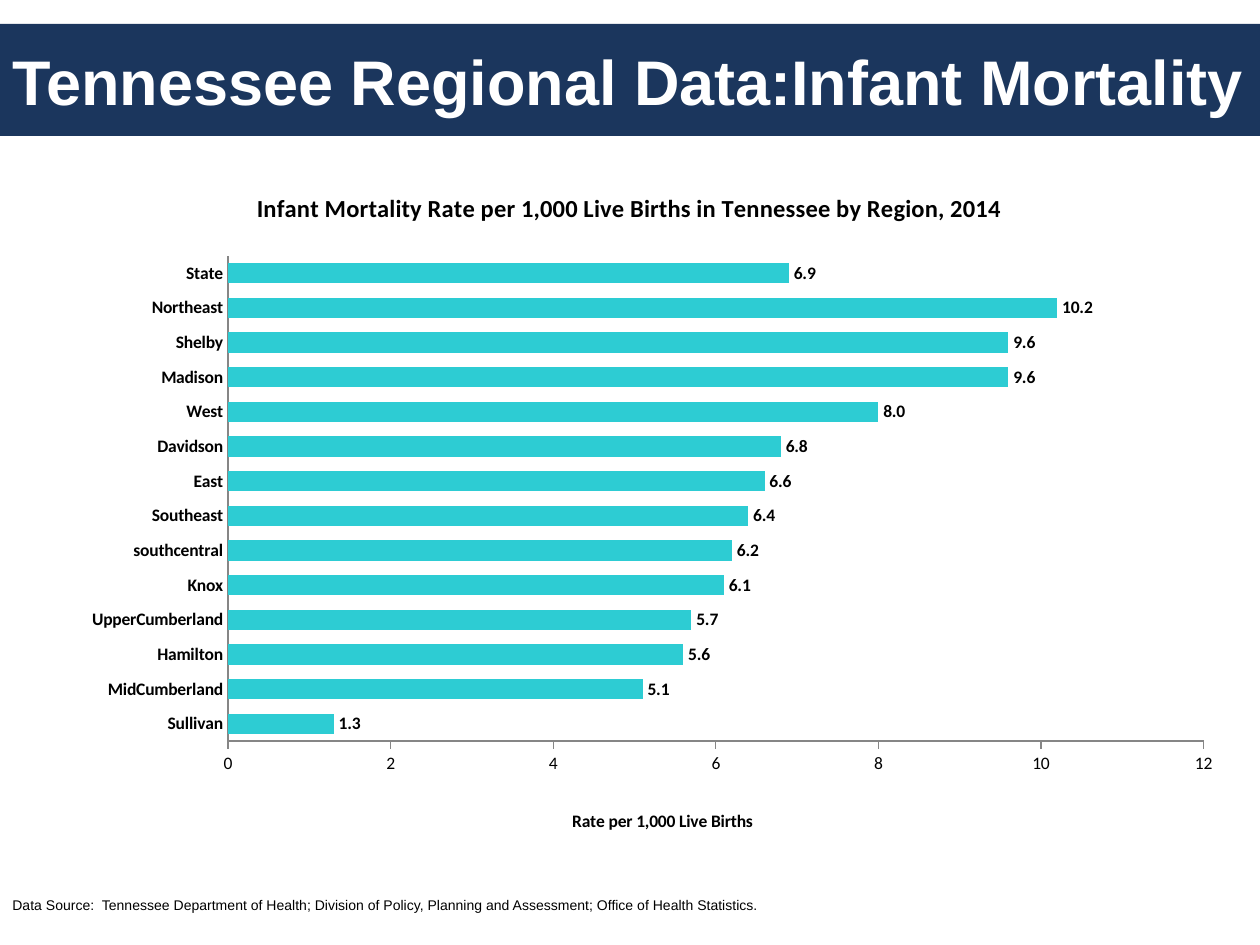
from dataclasses import dataclass

from lxml.etree import SubElement
from pptx import Presentation
from pptx.chart.data import CategoryChartData
from pptx.dml.color import RGBColor
from pptx.enum.chart import XL_CHART_TYPE as Kind, XL_LABEL_POSITION as Pos
from pptx.enum.chart import XL_TICK_MARK as Tick
from pptx.enum.shapes import MSO_SHAPE as Shape
from pptx.enum.text import MSO_ANCHOR as Anchor, PP_ALIGN as Align
from pptx.oxml.ns import qn
from pptx.util import Emu, Pt

# Content
HEAD = "Tennessee Regional Data:Infant Mortality"
SOURCE = ("Data Source:  Tennessee Department of Health; Division of Policy, "
          "Planning and Assessment; Office of Health Statistics.")
CHART_HEAD = "Infant Mortality Rate per 1,000 Live Births in Tennessee by Region, 2014"
AXIS_HEAD = "Rate per 1,000 Live Births"
RATES = [  # from the bottom bar up
    ("Sullivan", 1.3), ("MidCumberland", 5.1), ("Hamilton", 5.6),
    ("UpperCumberland", 5.7), ("Knox", 6.1), ("southcentral", 6.2),
    ("Southeast", 6.4), ("East", 6.6), ("Davidson", 6.8), ("West", 8.0),
    ("Madison", 9.6), ("Shelby", 9.6), ("Northeast", 10.2), ("State", 6.9),
]

# Boxes in px: left, top, width, height
SLIDE = (1260, 945)
BAND = (0, 24, 1260, 112)
CHART = (21, 158, 1218, 721)
NOTE = (0, 890, 1260, 30)


@dataclass(frozen=True)
class Theme:
    navy: str = "1B365D"
    teal: str = "2DCCD3"
    white: str = "FFFFFF"
    black: str = "000000"
    gray: str = "868686"
    font: str = "Arial"
    plot_font: str = "Calibri"
    head: int = 36
    chart_head: int = 14
    label: int = 10
    note: int = 8


T = Theme()


def px(n):
    return Emu(round(n * 914400 / 126))


def box(parts):
    return [px(n) for n in parts]


def style(font, name=T.plot_font, size=T.label, color=T.black, bold=False):
    font.name, font.size, font.bold = name, Pt(size), bold
    font.color.rgb = RGBColor.from_string(color)


def write(frame, text, align=Align.LEFT, anchor=Anchor.TOP, **form):
    frame.word_wrap = True
    frame.vertical_anchor = anchor
    para = frame.paragraphs[0]
    para.alignment = align
    run = para.add_run()
    run.text = text
    style(run.font, **form)


def lay_out(part, index, **spots):
    """Give a chart part a manual layout, as shares of the chart area."""
    old = part.find(qn("c:layout"))
    if old is not None:
        part.remove(old)
    layout = SubElement(part, qn("c:layout"))
    part.insert(index, layout)
    manual = SubElement(layout, qn("c:manualLayout"))
    for tag, val in spots.items():
        SubElement(manual, qn(f"c:{tag}")).set("val", str(val))


def add_rates(slide):
    data = CategoryChartData(number_format="0.0")
    data.categories = [name for name, _ in RATES]
    data.add_series("Series 1", [rate for _, rate in RATES])
    chart = slide.shapes.add_chart(Kind.BAR_CLUSTERED, *box(CHART), data).chart
    style(chart.font)
    chart.has_legend = False
    chart.has_title = True
    write(chart.chart_title.text_frame, CHART_HEAD, Align.CENTER,
          size=T.chart_head, bold=True)
    lay_out(chart.chart_title._element, 1, xMode="edge", yMode="edge", x=0.19, y=0.04)
    lay_out(chart._chartSpace.chart.plotArea, 0, layoutTarget="inner",
            xMode="edge", yMode="edge", x=0.17, y=0.136, w=0.801, h=0.673)

    # Bars and their labels
    plot = chart.plots[0]
    plot.gap_width, plot.vary_by_categories = 70, False
    fill = plot.series[0].format.fill
    fill.solid()
    fill.fore_color.rgb = RGBColor.from_string(T.teal)
    plot.has_data_labels = True
    labels = plot.data_labels
    labels.show_value, labels.position = True, Pos.OUTSIDE_END
    labels.number_format, labels.number_format_is_linked = "0.0", False
    style(labels.font, bold=True)

    # Axes
    names, scale = chart.category_axis, chart.value_axis
    for axis, tick, bold in ((names, Tick.NONE, True), (scale, Tick.OUTSIDE, False)):
        axis.major_tick_mark, axis.minor_tick_mark = tick, Tick.NONE
        axis.has_major_gridlines = False
        axis.format.line.color.rgb = RGBColor.from_string(T.gray)
        style(axis.tick_labels.font, bold=bold)
    scale.minimum_scale, scale.maximum_scale, scale.major_unit = 0, 12, 2
    scale.tick_labels.number_format = "0"
    scale.tick_labels.number_format_is_linked = False
    write(scale.axis_title.text_frame, AXIS_HEAD, Align.CENTER, bold=True)
    lay_out(scale.axis_title._element, 1, xMode="edge", yMode="edge", x=0.45, y=0.9)


def main():
    deck = Presentation()
    deck.slide_width, deck.slide_height = box(SLIDE)
    slide = deck.slides.add_slide(deck.slide_layouts[5])

    # Band, placed behind the title
    band = slide.shapes.add_shape(Shape.RECTANGLE, *box(BAND))
    band.shadow.inherit = False
    band.fill.solid()
    band.fill.fore_color.rgb = RGBColor.from_string(T.navy)
    band.line.fill.background()
    title = slide.shapes.title
    band._element.addnext(title._element)
    title.left, title.top, title.width, title.height = box(BAND)
    write(title.text_frame, HEAD, anchor=Anchor.MIDDLE,
          name=T.font, size=T.head, color=T.white, bold=True)

    # Source note and chart
    note = slide.shapes.add_textbox(*box(NOTE))
    write(note.text_frame, SOURCE, name=T.font, size=T.note)
    add_rates(slide)
    deck.save("out.pptx")


if __name__ == "__main__":
    main()
